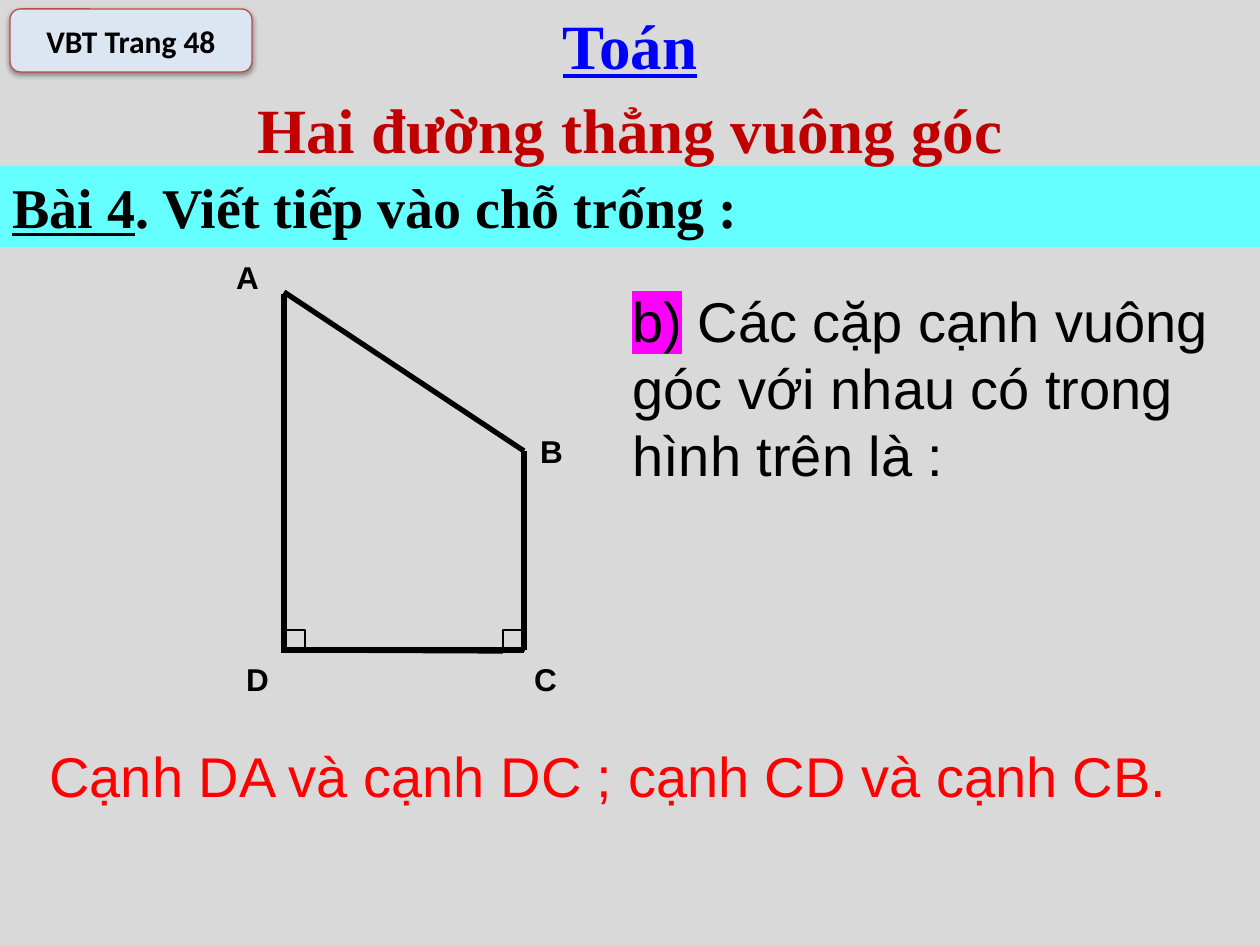
from lxml import etree
from pptx import Presentation
from pptx import util as u
from pptx.dml.color import RGBColor
from pptx.enum import shapes, text
from pptx.oxml.ns import qn

EMU_PER_PX = 914400 / 126
WIDTH, HEIGHT = 1260, 945

GRAY = RGBColor(0xD9, 0xD9, 0xD9)
BLACK = RGBColor(0x00, 0x00, 0x00)
BLUE = RGBColor(0x00, 0x00, 0xFF)
CYAN = RGBColor(0x66, 0xFF, 0xFF)
CRIMSON = RGBColor(0xC0, 0x00, 0x00)
RED = RGBColor(0xFF, 0x00, 0x00)
PALE_BLUE = RGBColor(0xDC, 0xE6, 0xF2)
BRICK = RGBColor(0xBF, 0x4C, 0x48)
MAGENTA = RGBColor(0xFF, 0x00, 0xFF)

SERIF, SANS, BADGE_FONT = "Times New Roman", "Arial", "Calibri"
LEFT, CENTER, JUSTIFY = (
    text.PP_ALIGN.LEFT, text.PP_ALIGN.CENTER, text.PP_ALIGN.JUSTIFY)
TOP, MIDDLE = text.MSO_ANCHOR.TOP, text.MSO_ANCHOR.MIDDLE
RECTANGLE = shapes.MSO_SHAPE.RECTANGLE
ROUNDED = shapes.MSO_SHAPE.ROUNDED_RECTANGLE


def px(*lengths):
    return [u.Emu(round(length * EMU_PER_PX)) for length in lengths]


def add_color(parent, tag, color):
    element = etree.SubElement(parent, qn(tag))
    return etree.SubElement(element, qn("a:srgbClr"), val=str(color))


class Board:
    """Holds the current slide and the default text style."""

    def __init__(self, slide, font=SANS, color=BLACK):
        self.slide, self.font, self.color = slide, font, color
        fill = slide.background.fill
        fill.solid()
        fill.fore_color.rgb = GRAY

    def fill_text(self, shape, runs, size, align=LEFT, anchor=TOP, font=None,
                  color=None, bold=False):
        """Each run is a string, or a pair of a string and its extra style."""
        frame = shape.text_frame
        frame.word_wrap = True
        frame.vertical_anchor = anchor
        paragraph = frame.paragraphs[0]
        paragraph.alignment = align
        for item in runs:
            words, extra = (item, {}) if isinstance(item, str) else item
            run = paragraph.add_run()
            run.text = words
            run.font.size = u.Pt(size)
            run.font.name = font or self.font
            run.font.bold = bold
            run.font.underline = extra.get("underline", False)
            run.font.color.rgb = color or self.color
            if "highlight" in extra:
                properties = run.font._element
                add_color(properties, "a:highlight", extra["highlight"])
                properties.find(qn("a:solidFill")).addnext(properties[-1])

    def text(self, box, runs, size, **style):
        text_box = self.slide.shapes.add_textbox(*px(*box))
        self.fill_text(text_box, runs, size, **style)

    def shape(self, kind, box, fill=None, line=None, weight=1.0):
        shape = self.slide.shapes.add_shape(kind, *px(*box))
        shape.shadow.inherit = False
        if fill is None:
            shape.fill.background()
        else:
            shape.fill.solid()
            shape.fill.fore_color.rgb = fill
        if line is None:
            shape.line.fill.background()
        else:
            shape.line.color.rgb = line
            shape.line.width = u.Pt(weight)
        return shape

    def drop_shadow(self, shape):
        effects = shape._element.spPr.find(qn("a:effectLst"))
        shadow = etree.SubElement(
            effects, qn("a:outerShdw"), blurRad="40000", dist="20000",
            dir="5400000", rotWithShape="0")
        color = etree.SubElement(shadow, qn("a:srgbClr"), val=str(BLACK))
        etree.SubElement(color, qn("a:alpha"), val="38000")

    def line(self, start, end):
        connector = self.slide.shapes.add_connector(
            shapes.MSO_CONNECTOR.STRAIGHT, *px(*start, *end))
        connector.line.color.rgb = BLACK
        connector.line.width = u.Pt(3)
        etree.SubElement(connector._element.spPr, qn("a:effectLst"))


def draw_headings(board):
    board.text((0, 0, WIDTH, 89), [("Toán", {"underline": True})], 36,
               align=CENTER, font=SERIF, color=BLUE, bold=True)
    band = board.shape(RECTANGLE, (0, 166, WIDTH, 81), fill=CYAN)
    board.fill_text(band, [("Bài 4", {"underline": True}),
                           ". Viết tiếp vào chỗ trống :"], 32,
                    align=JUSTIFY, font=SERIF, bold=True)
    badge = board.shape(ROUNDED, (10, 9, 242, 63), PALE_BLUE, BRICK, 0.75)
    board.drop_shadow(badge)
    board.fill_text(badge, ["VBT Trang 48"], 18, align=CENTER, anchor=MIDDLE,
                    font=BADGE_FONT, bold=True)
    board.text((0, 84, WIDTH, 89), ["Hai đường thẳng vuông góc"], 36,
               align=CENTER, font=SERIF, color=CRIMSON, bold=True)


def draw_trapezoid(board):
    left, right, base, corner = 284, 524, 650, 21
    a, b, c, d = (left, 292), (right, 451), (right, base), (left, base)
    board.line(d, (right - corner, base + 1))
    board.line(a, b)
    board.line((left, base + 3), (left, 294))
    board.line(d, c)
    board.line(c, b)
    for name, x, y in (("A", 221, 252), ("B", 525, 426),
                       ("C", 519, 654), ("D", 231, 654)):
        board.text((x, y, 53, 50), [name], 18, align=CENTER, bold=True)
    for x in (left, right - corner):
        board.shape(RECTANGLE, (x, base - corner + 1, corner, corner),
                    line=BLACK, weight=1.5)


def main():
    presentation = Presentation()
    presentation.slide_width, presentation.slide_height = px(WIDTH, HEIGHT)
    slide = presentation.slides.add_slide(presentation.slide_layouts[6])
    board = Board(slide)
    draw_headings(board)
    draw_trapezoid(board)
    board.text((37, 735, 1187, 81),
               ["Cạnh DA và cạnh DC ; cạnh CD và cạnh CB."], 32, color=RED)
    board.text((620, 280, 615, 217),
               [("b)", {"highlight": MAGENTA}),
                " Các cặp cạnh vuông góc với nhau có trong hình trên là :"], 32)
    presentation.save("out.pptx")


if __name__ == "__main__":
    main()
